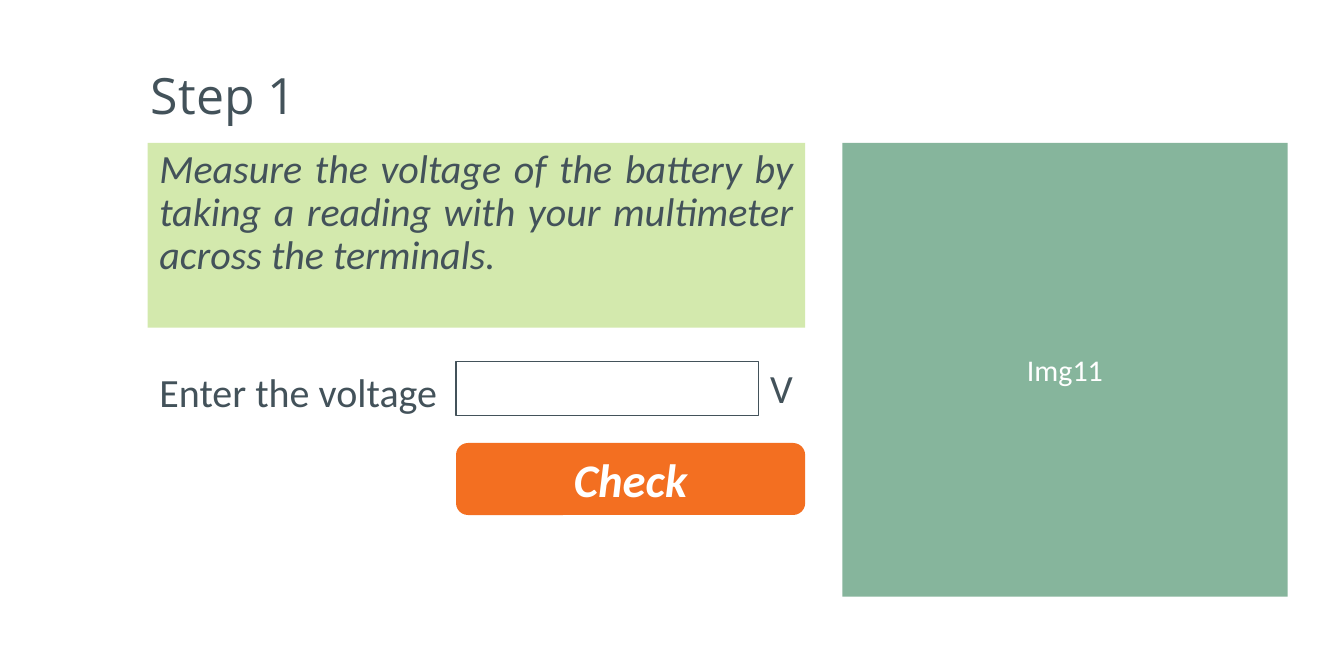
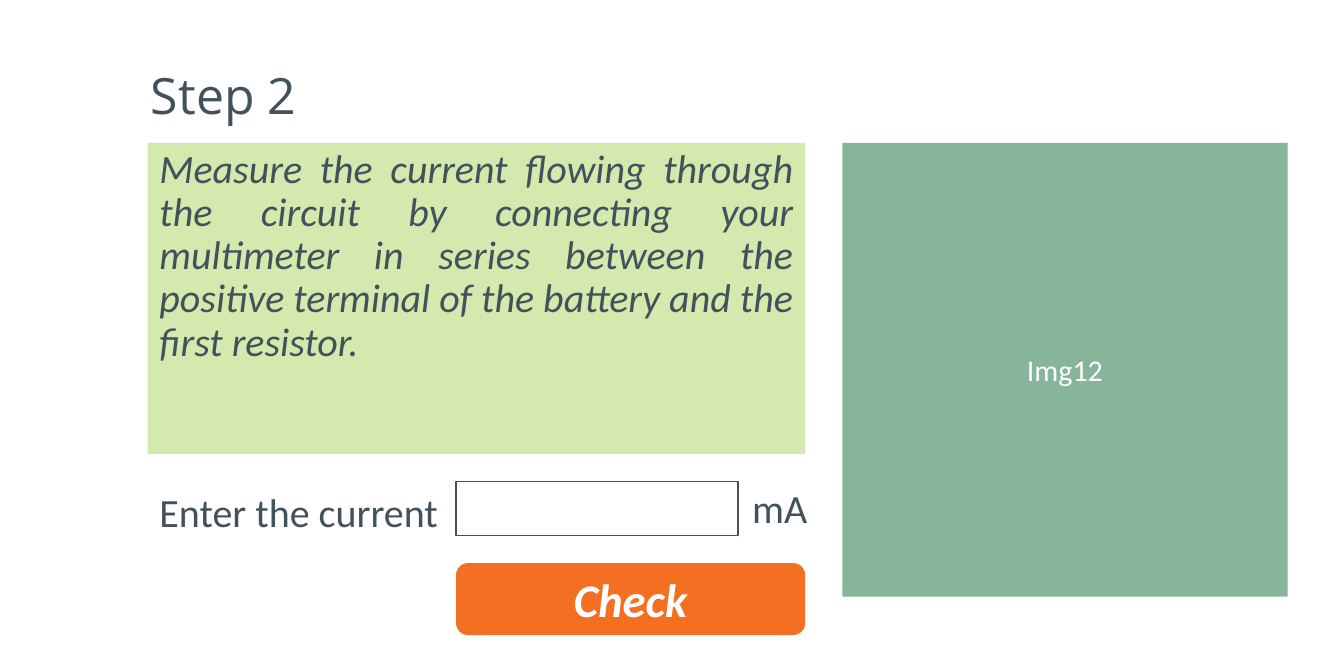
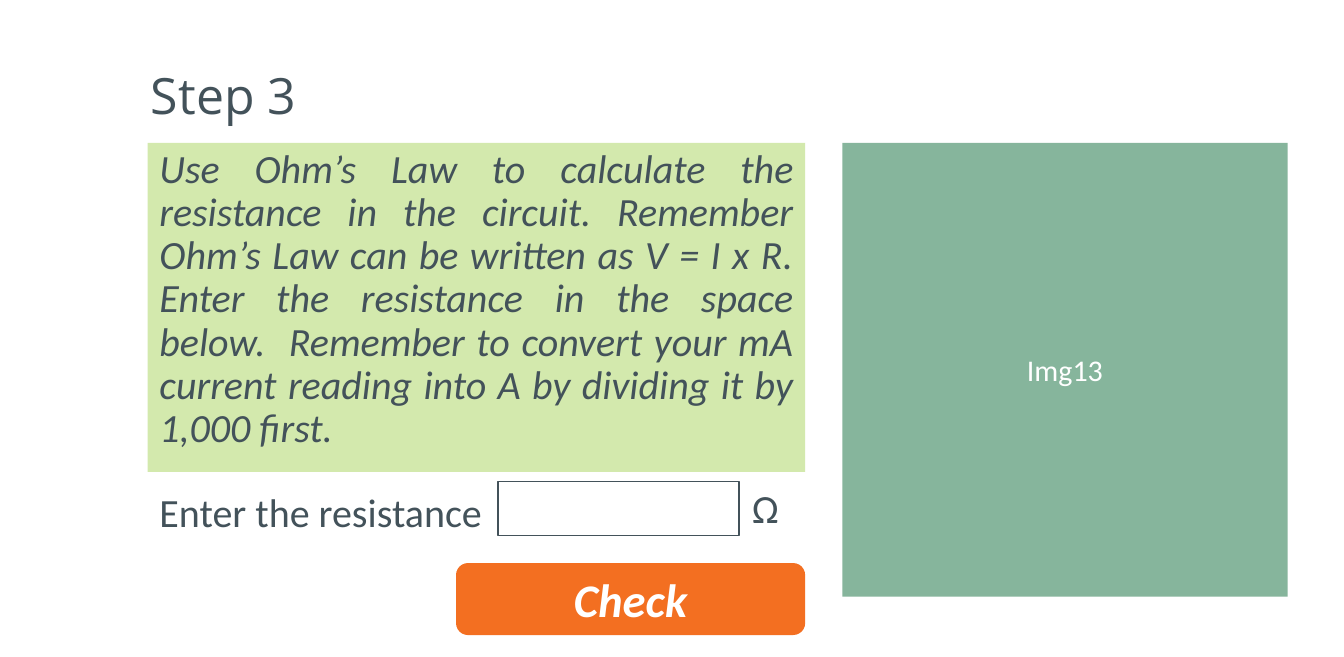
import collections

import pptx
import pptx.dml.color
import pptx.enum.shapes
import pptx.enum.text
import pptx.util

Inches = pptx.util.Inches
Pt = pptx.util.Pt
Align = pptx.enum.text.PP_ALIGN
Anchor = pptx.enum.text.MSO_ANCHOR
Preset = pptx.enum.shapes.MSO_SHAPE

Theme = collections.namedtuple(
    "Theme",
    "ink white instruction picture button title_font body_font "
    "title_size body_size picture_size button_size",
)
theme = Theme(
    ink="43525A", white="FFFFFF", instruction="D3E9AD", picture="86B59C", button="F36F21",
    title_font="Open Sans", body_font="Calibri",
    title_size=30, body_size=24, picture_size=18, button_size=28,
)

CM_PER_INCH = 2.54
LEFT = 1.23
TOP = 1.19
COLUMN_WIDTH = 5.48
BUTTON_LEFT = 3.8
BUTTON_WIDTH = LEFT + COLUMN_WIDTH - BUTTON_LEFT


def add_box(slide, left, top, width, height, preset=None, fill=None, line=None):
    """Add a text box, or a shape when a preset is given."""
    place = [Inches(length) for length in (left, top, width, height)]
    if preset is None:
        return slide.shapes.add_textbox(*place)
    shape = slide.shapes.add_shape(preset, *place)
    shape.shadow.inherit = False
    if fill:
        shape.fill.solid()
        shape.fill.fore_color.rgb = pptx.dml.color.RGBColor.from_string(fill)
    else:
        shape.fill.background()
    if line:
        shape.line.color.rgb = pptx.dml.color.RGBColor.from_string(line)
        shape.line.width = Pt(1)
    else:
        shape.line.fill.background()
    return shape


def write_text(shape, text, size=theme.body_size, font=theme.body_font, color=theme.ink,
               bold=False, italic=False, align=Align.LEFT, anchor=Anchor.TOP,
               line_spacing=None, space_before=None, wrap=True):
    frame = shape.text_frame
    frame.word_wrap = wrap
    frame.vertical_anchor = anchor
    if not wrap:
        frame.auto_size = pptx.enum.text.MSO_AUTO_SIZE.SHAPE_TO_FIT_TEXT
    paragraph = frame.paragraphs[0]
    paragraph.alignment = align
    if line_spacing:
        paragraph.line_spacing = line_spacing
    if space_before:
        paragraph.space_before = Pt(space_before)
    run = paragraph.add_run()
    run.text = text
    run.font.name = font
    run.font.size = Pt(size)
    run.font.bold = bold
    run.font.italic = italic
    run.font.color.rgb = pptx.dml.color.RGBColor.from_string(color)


Step = collections.namedtuple(
    "Step",
    "instruction instruction_height quantity label_width row_top "
    "answer_left answer_width unit unit_left unit_width",
)
steps = [
    Step("Measure the voltage of the battery by taking a reading with your multimeter "
         "across the terminals.",
         1.54, "voltage", 2.54, 3.01, 3.8, 2.52, "V", 6.32, 0.39),
    Step("Measure the current flowing through the circuit by connecting your multimeter "
         "in series between the positive terminal of the battery and the first resistor.",
         2.59, "current", 2.55, 4.01, 3.8, 2.35, "mA", 6.17, 0.66),
    Step("Use Ohm’s Law to calculate the resistance in the circuit. Remember Ohm’s Law "
         "can be written as V = I x R. Enter the resistance in the space below.  Remember "
         "to convert your mA current reading into A by dividing it by 1,000 first.",
         2.74, "resistance", 2.92, 4.01, 4.15, 2.01, "Ω", 6.17, 0.43),
]

presentation = pptx.Presentation()
presentation.slide_width = Inches(11.2)
presentation.slide_height = Inches(13.9 / CM_PER_INCH)
blank_layout = presentation.slide_layouts[6]

for number, step in enumerate(steps, start=1):
    slide = presentation.slides.add_slide(blank_layout)

    title = add_box(slide, 1.16, 0.29, 8.39, 1.06)
    write_text(title, f"Step {number}", size=theme.title_size, font=theme.title_font,
               anchor=Anchor.MIDDLE, line_spacing=0.9)

    instruction = add_box(slide, LEFT, TOP, COLUMN_WIDTH, step.instruction_height,
                          Preset.RECTANGLE, fill=theme.instruction)
    write_text(instruction, step.instruction, italic=True, align=Align.JUSTIFY,
               line_spacing=0.9, space_before=7.3)

    picture_area = add_box(slide, 7.02, TOP, 3.71, 3.78, Preset.RECTANGLE, fill=theme.picture)
    write_text(picture_area, f"Img{10 + number}", size=theme.picture_size, color=theme.white,
               align=Align.CENTER, anchor=Anchor.MIDDLE)

    add_box(slide, step.answer_left, step.row_top, step.answer_width, 0.45,
            Preset.RECTANGLE, line=theme.ink)

    button = add_box(slide, BUTTON_LEFT, step.row_top + 0.68, BUTTON_WIDTH, 0.6,
                     Preset.ROUNDED_RECTANGLE, fill=theme.button)
    write_text(button, "Check", size=theme.button_size, color=theme.white, bold=True,
               italic=True, align=Align.CENTER, anchor=Anchor.MIDDLE)

    label = add_box(slide, LEFT, step.row_top, step.label_width, 0.5)
    write_text(label, f"Enter the {step.quantity}", wrap=False)

    unit = add_box(slide, step.unit_left, step.row_top - 0.03, step.unit_width, 0.5)
    write_text(unit, step.unit, wrap=False)

presentation.save("out.pptx")
